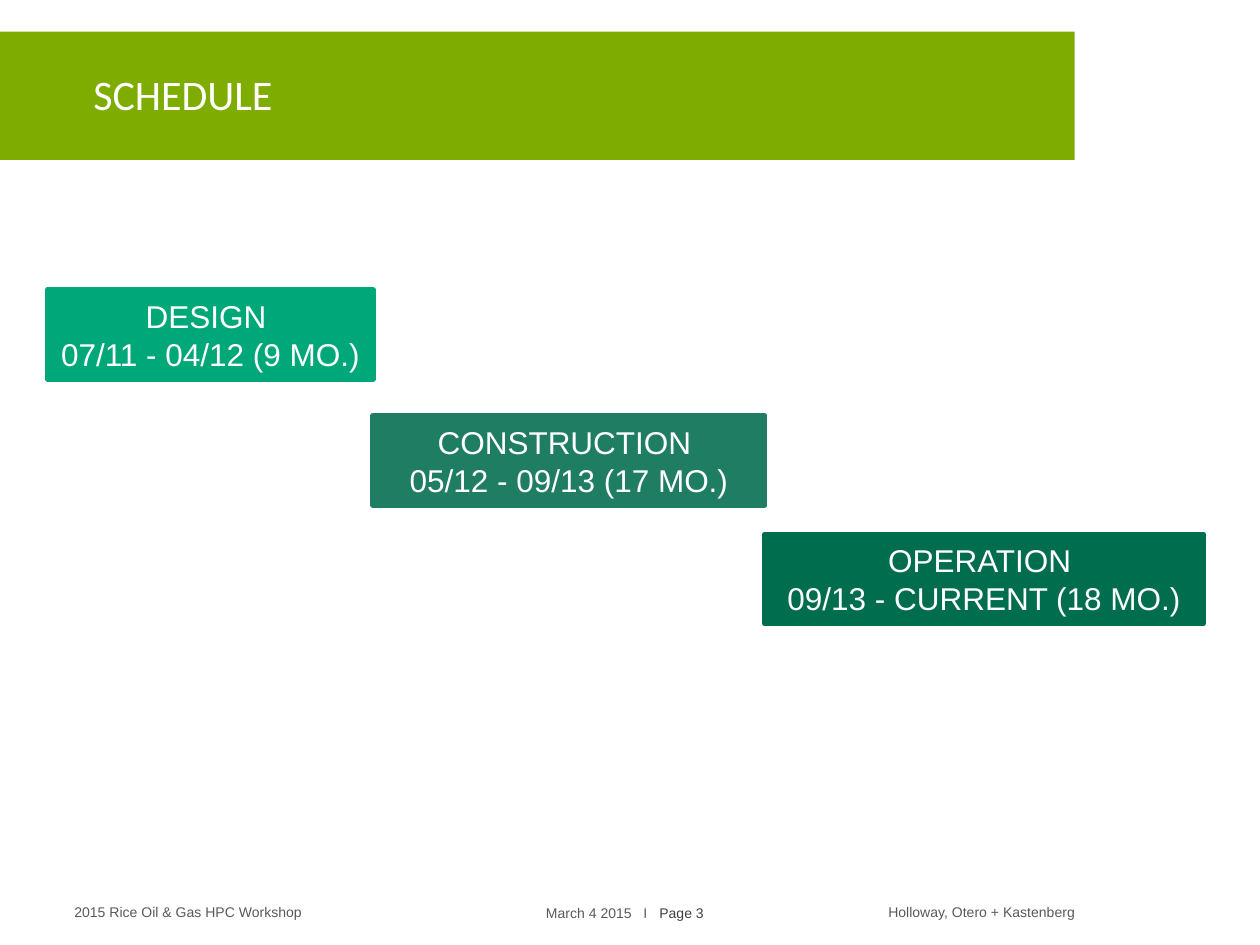
from pptx import Presentation
from pptx.dml.color import RGBColor
from pptx.enum.shapes import MSO_SHAPE
from pptx.enum.text import MSO_ANCHOR, PP_ALIGN
from pptx.util import Inches, Pt

RECT = MSO_SHAPE.RECTANGLE
MIDDLE = MSO_ANCHOR.MIDDLE
LEFT, CENTER = PP_ALIGN.LEFT, PP_ALIGN.CENTER

WHITE = RGBColor(0xFF, 0xFF, 0xFF)
LIME = RGBColor(0x7F, 0xAC, 0x00)
MINT = RGBColor(0x00, 0xA7, 0x79)
TEAL = RGBColor(0x1F, 0x7D, 0x63)
PINE = RGBColor(0x00, 0x6D, 0x4F)
GRAY = RGBColor(0x59, 0x59, 0x59)
DARK = RGBColor(0x40, 0x40, 0x40)

TITLE = "SCHEDULE"
START = 0.38
PHASES = [
    ("DESIGN ", "07/11 - 04/12 (9 MO.)", 2.3, 2.58, MINT),
    ("CONSTRUCTION ", "05/12 - 09/13 (17 MO.)", 3.3, 3.11, TEAL),
    ("OPERATION ", "09/13 - CURRENT (18 MO.)", 4.24, 3.48, PINE),
]
FOOTERS = [
    (0.46, 6.97, 3.67, LEFT, [("2015 Rice Oil & Gas HPC Workshop", GRAY)]),
    (6.92, 6.97, 2.67, LEFT, [("Holloway, Otero + Kastenberg", GRAY)]),
    (2.96, 6.98, 4, CENTER, [("March 4 2015   I   ", GRAY), ("Page 3", DARK)]),
]


def style(font, name, size, color):
    font.name = name
    font.size = Pt(size)
    font.color.rgb = color


def add_box(slide, spot, color):
    box = slide.shapes.add_shape(RECT, *map(Inches, spot))
    box.shadow.inherit = False
    box.fill.solid()
    box.fill.fore_color.rgb = color
    box.line.fill.background()
    return box


def add_text(slide, spot, pads, runs, name, size, align=LEFT):
    frame = slide.shapes.add_textbox(*map(Inches, spot)).text_frame
    frame.word_wrap = True
    frame.vertical_anchor = MIDDLE
    (frame.margin_left, frame.margin_top,
     frame.margin_right, frame.margin_bottom) = map(Inches, pads)
    para = frame.paragraphs[0]
    para.alignment = align
    for text, color in runs:
        run = para.add_run()
        run.text = text
        style(run.font, name, size, color)


def add_phase(slide, left, phase):
    name, dates, top, width, color = phase
    box = add_box(slide, (left, top, width, 0.71), color)
    box.line.color.rgb = color
    box.line.width = Pt(3)
    frame = box.text_frame
    frame.word_wrap = False
    frame.vertical_anchor = MIDDLE
    frame.text = f"{name}\n{dates}"
    for para in frame.paragraphs:
        para.alignment = CENTER
        style(para.runs[0].font, "Arial", 18, WHITE)


def main():
    deck = Presentation()
    deck.slide_width, deck.slide_height = Inches(10), Inches(7.5)
    slide = deck.slides.add_slide(deck.slide_layouts[6])
    add_box(slide, (0, 0.25, 8.53, 1.02), LIME)
    for left, top, width, align, runs in FOOTERS:
        add_text(slide, (left, top, width, 0.53), (0.13, 0.07, 0.13, 0.07),
                 runs, "Arial", 8, align)
    left = START
    for phase in PHASES:
        add_phase(slide, left, phase)
        left += phase[3]
    add_text(slide, (0.74, 0.26, 7.79, 1.01), (0, 0, 0.1, 0.05),
             [(TITLE, WHITE)], "Calibri", 24)
    deck.save("out.pptx")


if __name__ == "__main__":
    main()
